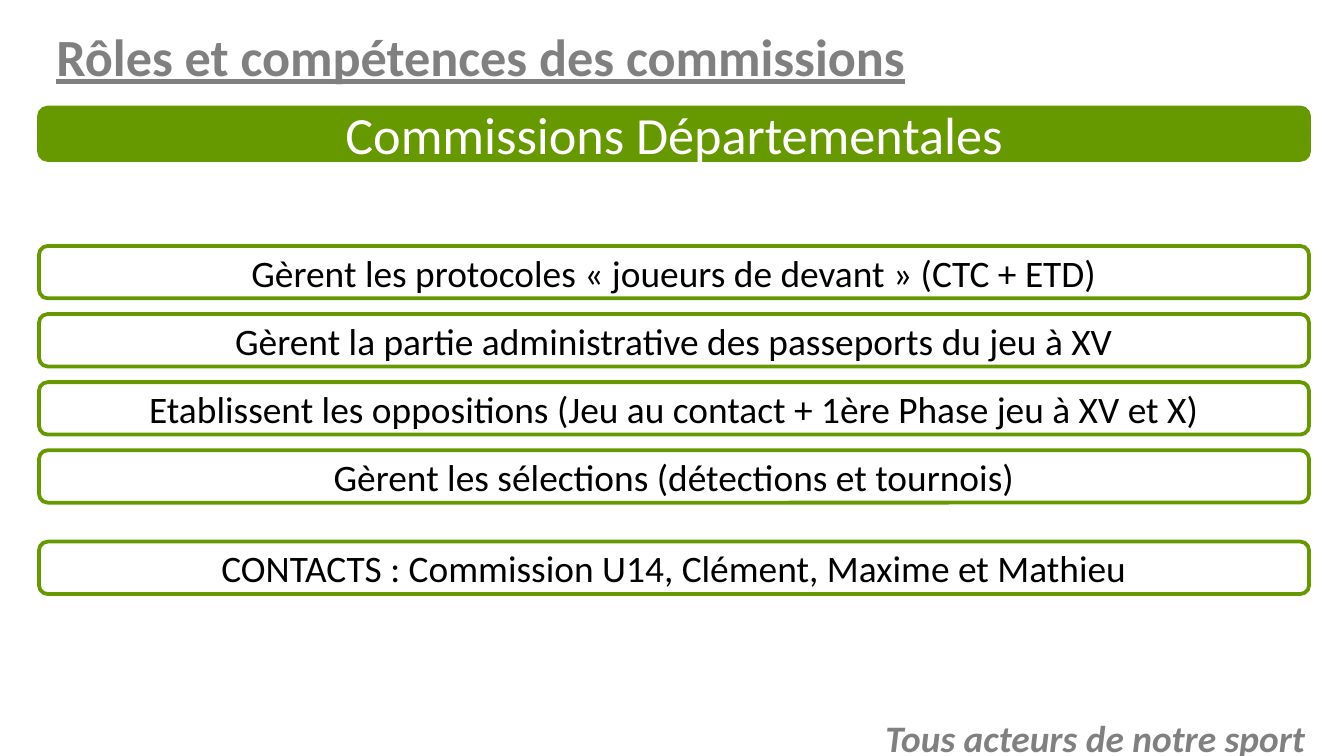
from pptx import Presentation
from pptx.dml.color import RGBColor
from pptx.enum.shapes import MSO_SHAPE
from pptx.enum.text import MSO_ANCHOR, PP_ALIGN
from pptx.util import Inches, Pt

TITLE = "Rôles et compétences des commissions"
BANNER = "Commissions Départementales"
MISSIONS = [
    "Gèrent les protocoles « joueurs de devant » (CTC + ETD)",
    "Gèrent la partie administrative des passeports du jeu à XV",
    "Etablissent les oppositions (Jeu au contact + 1ère Phase jeu à XV et X)",
    "Gèrent les sélections (détections et tournois)",
]
CONTACTS = "CONTACTS : Commission U14, Clément, Maxime et Mathieu"
MOTTO = "Tous acteurs de notre sport"

COLORS = {"green": "669900", "grey": "808080", "white": "FFFFFF", "black": "000000"}
SLIDE_WIDTH = 10
SLIDE_HEIGHT = SLIDE_WIDTH * 9 / 16
LEFT, WIDTH, BAR_HEIGHT = 0.29, 9.45, 0.39
BANNER_TOP, MISSIONS_TOP, CONTACTS_TOP = 0.8, 1.83, 4.03
MISSIONS_BOTTOM_ROW_TOP = 3.35
ROW_PITCH = (MISSIONS_BOTTOM_ROW_TOP - MISSIONS_TOP) / (len(MISSIONS) - 1)

LARGE = {"name": "Calibri", "size": Pt(28)}
SMALL = {"name": "Calibri", "size": Pt(20)}


def color(name):
    return RGBColor.from_string(COLORS[name])


def write(shape, text, font_format, color_name, align, **frame_format):
    frame = shape.text_frame
    frame.text = text
    frame_values = {
        "word_wrap": True, "vertical_anchor": MSO_ANCHOR.MIDDLE,
        "margin_left": Inches(0.1), "margin_right": Inches(0.1),
        "margin_top": Inches(0.05), "margin_bottom": Inches(0.05),
    }
    for name, value in {**frame_values, **frame_format}.items():
        setattr(frame, name, value)
    paragraph = frame.paragraphs[0]
    paragraph.alignment = align
    font = paragraph.runs[0].font
    for name, value in font_format.items():
        setattr(font, name, value)
    font.color.rgb = color(color_name)


def add_bar(slide, top, text, font_format, color_name, filled=False):
    bar = slide.shapes.add_shape(
        MSO_SHAPE.ROUNDED_RECTANGLE,
        Inches(LEFT), Inches(top), Inches(WIDTH), Inches(BAR_HEIGHT))
    bar.shadow.inherit = False
    if filled:
        bar.fill.solid()
        bar.fill.fore_color.rgb = color("green")
    else:
        bar.fill.background()
    bar.line.color.rgb = color("green")
    bar.line.width = Pt(2)
    write(bar, text, font_format, color_name, PP_ALIGN.CENTER)


presentation = Presentation()
presentation.slide_width = Inches(SLIDE_WIDTH)
presentation.slide_height = Inches(SLIDE_HEIGHT)
slide = presentation.slides.add_slide(presentation.slide_layouts[5])

title = slide.shapes.title
title_place = {"left": LEFT, "top": 0.15, "width": WIDTH, "height": 0.53}
for name, value in title_place.items():
    setattr(title, name, Inches(value))
write(title, TITLE, {**LARGE, "bold": True, "underline": True}, "grey", PP_ALIGN.LEFT,
      margin_left=Inches(0.13))

add_bar(slide, BANNER_TOP, BANNER, LARGE, "white", filled=True)
for row, mission in enumerate(MISSIONS):
    add_bar(slide, MISSIONS_TOP + row * ROW_PITCH, mission, SMALL, "black")
add_bar(slide, CONTACTS_TOP, CONTACTS, SMALL, "black")

motto = slide.shapes.add_textbox(Inches(6.42), Inches(5.25), Inches(3.46), Inches(0.37))
write(motto, MOTTO, {**SMALL, "bold": True, "italic": True}, "grey", PP_ALIGN.CENTER,
      vertical_anchor=MSO_ANCHOR.TOP, margin_top=Inches(0.07), margin_bottom=0)

presentation.save("out.pptx")
